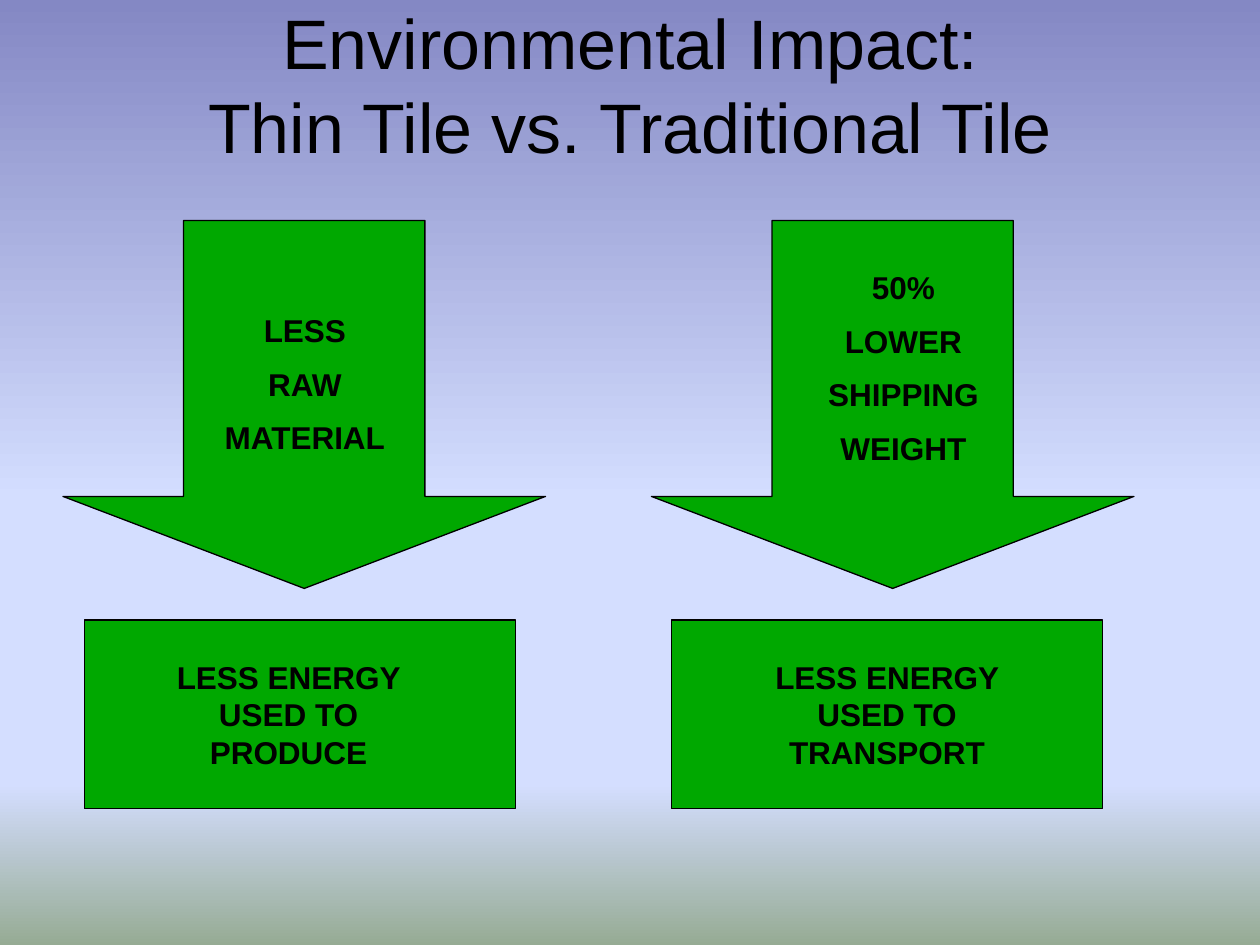
import lxml.etree
import pptx
import pptx.dml.color
import pptx.enum.shapes
import pptx.enum.text
import pptx.oxml
import pptx.oxml.ns
import pptx.util

Inches = pptx.util.Inches
SHAPES = pptx.enum.shapes.MSO_SHAPE

TITLE = "Environmental Impact:\vThin Tile vs. Traditional Tile"
# Per column: arrow left and label place, then box left and label left
COLUMNS = [
    {
        "arrow_left": 0.5, "cause": ["LESS", "RAW", "MATERIAL"],
        "cause_at": (1.67, 2.42, 1.5, 1.3),
        "box_left": 0.67, "effect": ["LESS ENERGY USED TO PRODUCE"],
        "effect_left": 1.08,
    },
    {
        "arrow_left": 5.17, "cause": ["50%", "LOWER", "SHIPPING", "WEIGHT"],
        "cause_at": (6.42, 2.08, 1.5, 1.76),
        "box_left": 5.33, "effect": ["LESS ENERGY USED TO TRANSPORT"],
        "effect_left": 5.83,
    },
]
COLORS = {"green": "00A800", "black": "000000"}
SKY = [(0, "8488C4"), (53, "D4DEFF"), (83, "D4DEFF"), (100, "96AB94")]


def color(name):
    return pptx.dml.color.RGBColor.from_string(COLORS[name])


def paint_background(page, stops):
    """Fill the page with a gradient running from top to bottom."""
    stop_xml = "".join(
        f'<a:gs pos="{percent * 1000}"><a:srgbClr val="{value}"/></a:gs>'
        for percent, value in stops
    )
    page.background.fill.solid()
    solid = page.element.find(".//" + pptx.oxml.ns.qn("p:bgPr"))[0]
    gradient = pptx.oxml.parse_xml(
        f'<a:gradFill {pptx.oxml.ns.nsdecls("a")} rotWithShape="0"><a:gsLst>{stop_xml}'
        '</a:gsLst><a:lin ang="5400000" scaled="1"/></a:gradFill>'
    )
    solid.getparent().replace(solid, gradient)


def write_text(frame, lines, size=18, bold=True, space_before=9):
    frame.word_wrap = True
    for index, line in enumerate(lines):
        para = frame.paragraphs[0] if index == 0 else frame.add_paragraph()
        para.text = line
        para.alignment = pptx.enum.text.PP_ALIGN.CENTER
        para.space_before = pptx.util.Pt(space_before)
        for span in para.runs:
            span.font.name = "Arial"
            span.font.size = pptx.util.Pt(size)
            span.font.bold = bold
            span.font.color.rgb = color("black")


def add_labelled_shape(page, kind, place, lines, label_place):
    """Group a green shape with the text box lying on it."""
    group = page.shapes.add_group_shape()
    shape = group.shapes.add_shape(kind, *map(Inches, place))
    shape.shadow.inherit = False
    shape.fill.solid()
    shape.fill.fore_color.rgb = color("green")
    shape.line.color.rgb = color("black")
    shape.line.width = pptx.util.Pt(0.75)
    label = group.shapes.add_textbox(*map(Inches, label_place))
    write_text(label.text_frame, lines)
    label.text_frame.auto_size = pptx.enum.text.MSO_AUTO_SIZE.SHAPE_TO_FIT_TEXT
    return shape


def main():
    deck = pptx.Presentation()
    deck.slide_width, deck.slide_height = Inches(10), Inches(7.5)
    page = deck.slides.add_slide(deck.slide_layouts[5])
    paint_background(page, SKY)

    title = page.shapes.title
    title.left, title.top = Inches(0), Inches(0)
    title.width, title.height = Inches(10), Inches(1.33)
    write_text(title.text_frame, [TITLE], size=40, bold=False, space_before=0)
    title.text_frame.vertical_anchor = pptx.enum.text.MSO_ANCHOR.MIDDLE

    for column in COLUMNS:
        arrow = add_labelled_shape(
            page, SHAPES.DOWN_ARROW, (column["arrow_left"], 1.75, 3.83, 2.92),
            column["cause"], column["cause_at"],
        )
        arrow.adjustments[0], arrow.adjustments[1] = 0.5, 0.25
        add_labelled_shape(
            page, SHAPES.RECTANGLE, (column["box_left"], 4.92, 3.42, 1.5),
            column["effect"], (column["effect_left"], 5.17, 2.42, 1),
        )
    deck.save("out.pptx")


if __name__ == "__main__":
    main()
